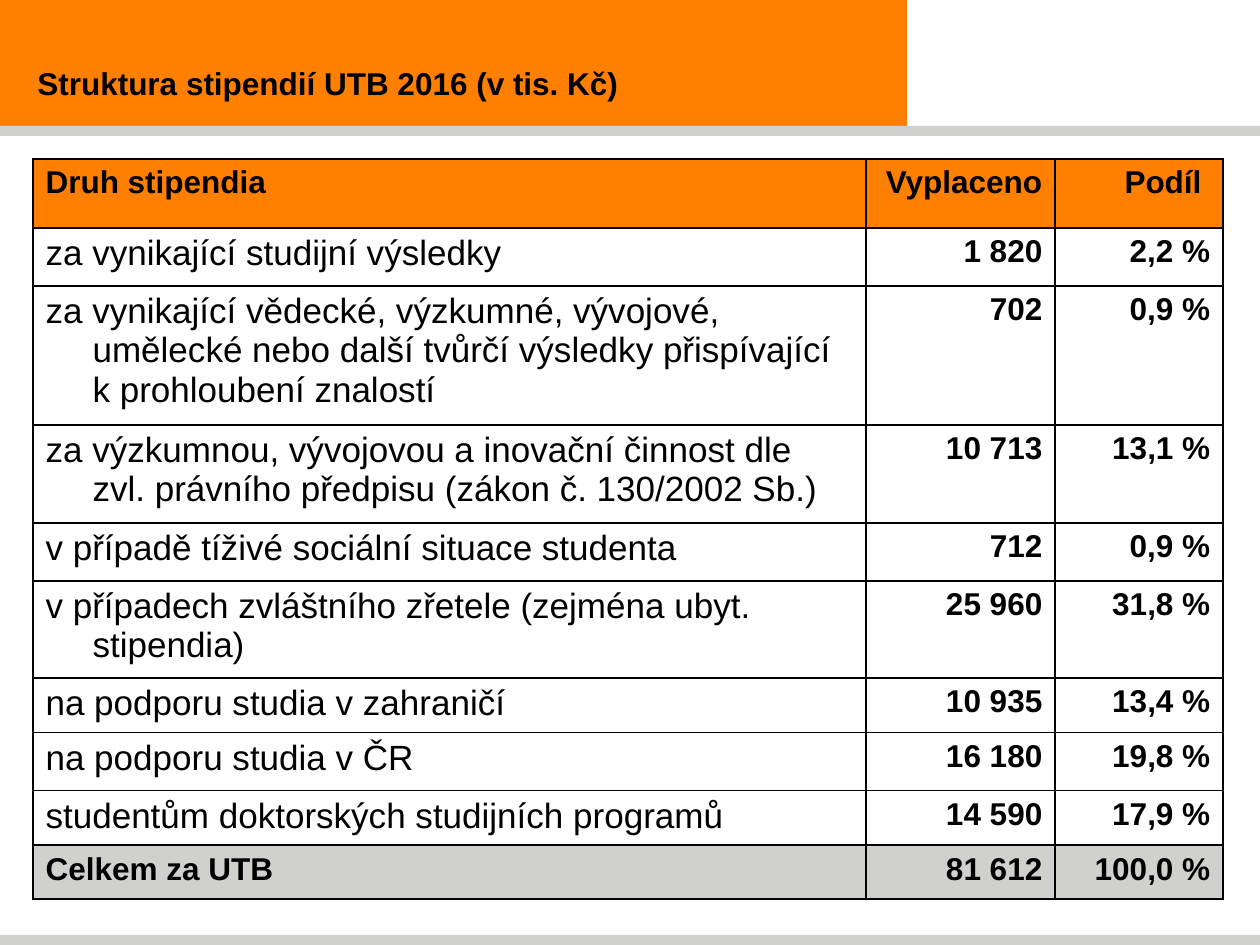
from lxml.etree import SubElement
from pptx import Presentation
from pptx.dml.color import RGBColor
from pptx.enum.shapes import MSO_SHAPE
from pptx.enum.text import MSO_ANCHOR, PP_ALIGN
from pptx.oxml.ns import qn
from pptx.util import Emu, Pt

ORANGE = RGBColor(0xFF, 0x80, 0x01)
GRAY = RGBColor(0xD0, 0xD0, 0xCE)
BLACK = RGBColor(0, 0, 0)
PX = 914400 // 126

TITLE = "Struktura stipendií UTB 2016 (v tis. Kč)"
BARS = [
    (0, 0, 907, 126, ORANGE),
    (0, 935, 1260, 10, GRAY),
    (0, 126, 1260, 10, GRAY),
]
TABLE_LEFT, TABLE_TOP = 33, 159
COL_WIDTHS = [833, 189, 168]
ROWS = [
    (69, "Druh stipendia", "Vyplaceno", "Podíl "),
    (58, "za vynikající studijní výsledky", "1 820", "2,2 %"),
    (139, "za vynikající vědecké, výzkumné, vývojové, umělecké nebo další tvůrčí "
          "výsledky přispívající k prohloubení znalostí", "702", "0,9 %"),
    (98, "za výzkumnou, vývojovou a inovační činnost dle zvl. právního předpisu "
         "(zákon č. 130/2002 Sb.)", "10 713", "13,1 %"),
    (58, "v případě tíživé sociální situace studenta", "712", "0,9 %"),
    (97, "v případech zvláštního zřetele (zejména ubyt. stipendia)", "25 960", "31,8 %"),
    (54, "na podporu studia v zahraničí", "10 935", "13,4 %"),
    (58, "na podporu studia v ČR", "16 180", "19,8 %"),
    (54, "studentům doktorských studijních programů", "14 590", "17,9 %"),
    (54, "Celkem za UTB", "81 612", "100,0 %"),
]
ROW_FILLS = {0: ORANGE, len(ROWS) - 1: GRAY}
STRONG = {"name": "Arial", "size": Pt(18), "bold": True}
PLAIN = {"name": "Arial", "size": Pt(20), "bold": False}


def px(n):
    return Emu(n * PX)


def write(p, text, fmt, left, indent=0):
    pPr = p._p.get_or_add_pPr()
    pPr.set("marL", str(px(left)))
    pPr.set("indent", str(px(indent)))
    r = p.add_run()
    r.text = text
    for name, value in fmt.items():
        setattr(r.font, name, value)
    r.font.color.rgb = BLACK


def add_borders(cell):
    tcPr = cell._tc.get_or_add_tcPr()
    for side in ("lnL", "lnR", "lnT", "lnB"):
        ln = SubElement(tcPr, qn(f"a:{side}"), w=str(Pt(1)))
        fill = SubElement(ln, qn("a:solidFill"))
        SubElement(fill, qn("a:srgbClr"), val=str(BLACK))


def add_bars(s):
    for x, y, w, h, color in BARS:
        sp = s.shapes.add_shape(MSO_SHAPE.RECTANGLE, px(x), px(y), px(w), px(h))
        sp.shadow.inherit = False
        sp.fill.solid()
        sp.fill.fore_color.rgb = color
        sp.line.fill.background()


def add_title(s):
    tf = s.shapes.add_textbox(px(0), px(40), px(907), px(86)).text_frame
    tf.word_wrap = True
    tf.vertical_anchor = MSO_ANCHOR.MIDDLE
    write(tf.paragraphs[0], TITLE, STRONG, 25)


def add_grants(s):
    height = sum(row[0] for row in ROWS)
    table = s.shapes.add_table(len(ROWS), len(COL_WIDTHS), px(TABLE_LEFT), px(TABLE_TOP),
                               px(sum(COL_WIDTHS)), px(height)).table
    table.first_row = table.horz_banding = False
    for col, width in zip(table.columns, COL_WIDTHS):
        col.width = px(width)
    for i, (row_height, *texts) in enumerate(ROWS):
        table.rows[i].height = px(row_height)
        for j, text in enumerate(texts):
            cell = table.cell(i, j)
            add_borders(cell)
            if i in ROW_FILLS:
                cell.fill.solid()
                cell.fill.fore_color.rgb = ROW_FILLS[i]
            else:
                cell.fill.background()
            p = cell.text_frame.paragraphs[0]
            p.alignment = PP_ALIGN.RIGHT if j else PP_ALIGN.LEFT
            write(p, text, STRONG if j or i in ROW_FILLS else PLAIN, 47, -47)


def main():
    prs = Presentation()
    prs.slide_width, prs.slide_height = px(1260), px(945)
    s = prs.slides.add_slide(prs.slide_layouts[6])
    add_bars(s)
    add_title(s)
    add_grants(s)
    prs.save("out.pptx")


if __name__ == "__main__":
    main()
